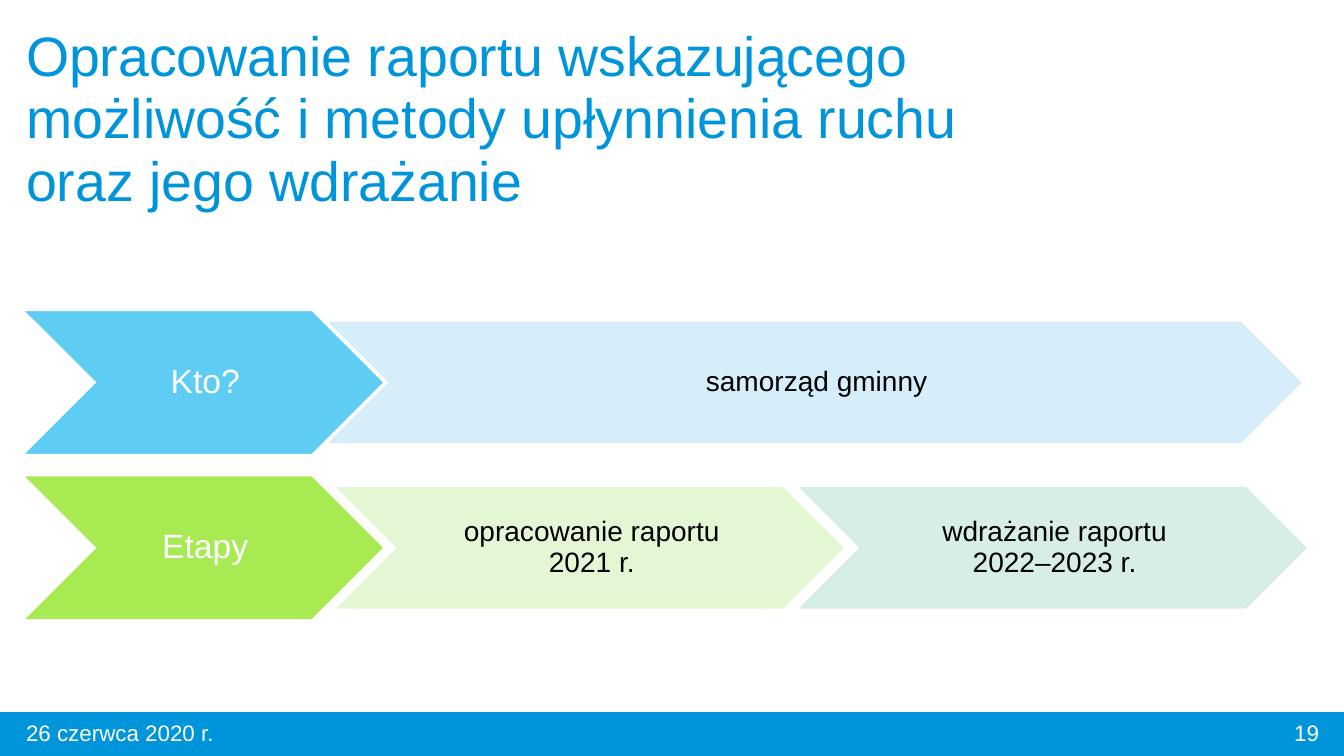
import pptx
import pptx.dml.color
import pptx.enum.shapes
import pptx.enum.text
import pptx.oxml
import pptx.oxml.ns
import pptx.util

Inches = pptx.util.Inches
Pt = pptx.util.Pt
MSO_SHAPE = pptx.enum.shapes.MSO_SHAPE
PP_ALIGN = pptx.enum.text.PP_ALIGN
MIDDLE = pptx.enum.text.MSO_ANCHOR.MIDDLE

COLORS = {
    "brand": "0094DA",
    "white": "FFFFFF",
    "black": "000000",
    "who": "5ECCF3",
    "who_light": "D2ECFA",
    "stages": "A7EA52",
    "stage_1": "E1F7D1",
    "stage_2": "D2EDE3",
}


def write(tf, text, size=20, color="black", align=PP_ALIGN.LEFT, spacing=1.0,
          insets=(0.1, 0.05, 0.1, 0.05)):
    """Fill a text frame with one paragraph; a newline becomes a line break."""
    tf.word_wrap = True
    tf.vertical_anchor = MIDDLE
    tf.margin_left, tf.margin_top, tf.margin_right, tf.margin_bottom = map(Inches, insets)
    p = tf.paragraphs[0]
    p.alignment = align
    p.line_spacing = spacing
    for i, line in enumerate(text.split("\n")):
        if i:
            p.add_line_break()
        r = p.add_run()
        r.text = line
        r.font.name = "Arial"
        r.font.size = Pt(size)
        r.font.color.rgb = pptx.dml.color.RGBColor.from_string(COLORS[color])


def set_alpha(fill_format, percent):
    color = fill_format._xPr.find(".//" + pptx.oxml.ns.qn("a:srgbClr"))
    color.append(pptx.oxml.parse_xml(
        f'<a:alpha {pptx.oxml.ns.nsdecls("a")} val="{percent * 1000}"/>'))


class Deck:
    def __init__(self):
        self.prs = pptx.Presentation()
        self.prs.slide_width = Inches(13.33)
        self.prs.slide_height = Inches(7.5)
        self.s = self.prs.slides.add_slide(self.prs.slide_layouts[6])

    def shape(self, kind, box, fill, line, alpha=None):
        sp = self.s.shapes.add_shape(kind, *map(Inches, box))
        sp.shadow.inherit = False
        sp.fill.solid()
        sp.fill.fore_color.rgb = pptx.dml.color.RGBColor.from_string(COLORS[fill])
        sp.line.color.rgb = pptx.dml.color.RGBColor.from_string(COLORS[line])
        sp.line.width = Pt(1)
        if alpha:
            set_alpha(sp.fill, alpha)
            set_alpha(sp.line.fill, alpha)
        return sp

    def text(self, box, text, **fmt):
        sp = self.s.shapes.add_textbox(*map(Inches, box))
        write(sp.text_frame, text, **fmt)

    def chevron(self, box, text, fill, line, alpha=None, **fmt):
        sp = self.shape(MSO_SHAPE.CHEVRON, box, fill, line, alpha)
        write(sp.text_frame, text, align=PP_ALIGN.CENTER, spacing=0.9,
              insets=(0.03, 0.01, 0, 0.01), **fmt)

    def row(self, top, label, fill, steps):
        """Draw a label chevron followed by paler, lower step chevrons."""
        self.chevron((0.23, top, 3.58, 1.43), label, fill, "white",
                     size=24, color="white")
        for left, width, text, step_fill in steps:
            self.chevron((left, top + 0.12, width, 1.19), text, step_fill,
                         step_fill, alpha=90)


def main():
    deck = Deck()
    deck.shape(MSO_SHAPE.RECTANGLE, (0, 7.07, 13.33, 0.43), "brand", "brand")
    deck.text((0.16, 0.22, 9.52, 1.94),
              "Opracowanie raportu wskazującego możliwość i metody "
              "upłynnienia ruchu oraz jego wdrażanie",
              size=39.6, color="brand", spacing=0.94)
    deck.row(3.08, "Kto?", "who", [(3.27, 9.63, "samorząd gminny", "who_light")])
    deck.row(4.72, "Etapy", "stages", [
        (3.35, 5.01, "opracowanie raportu\n2021 r.", "stage_1"),
        (7.94, 5.01, "wdrażanie raportu\n2022–2023 r.", "stage_2"),
    ])
    deck.text((0.16, 7.07, 4, 0.4), "26 czerwca 2020 r.", size=16, color="white")
    deck.text((10.18, 7.07, 3, 0.4), "19", size=16, color="white",
              align=PP_ALIGN.RIGHT)
    deck.prs.save("out.pptx")


if __name__ == "__main__":
    main()
